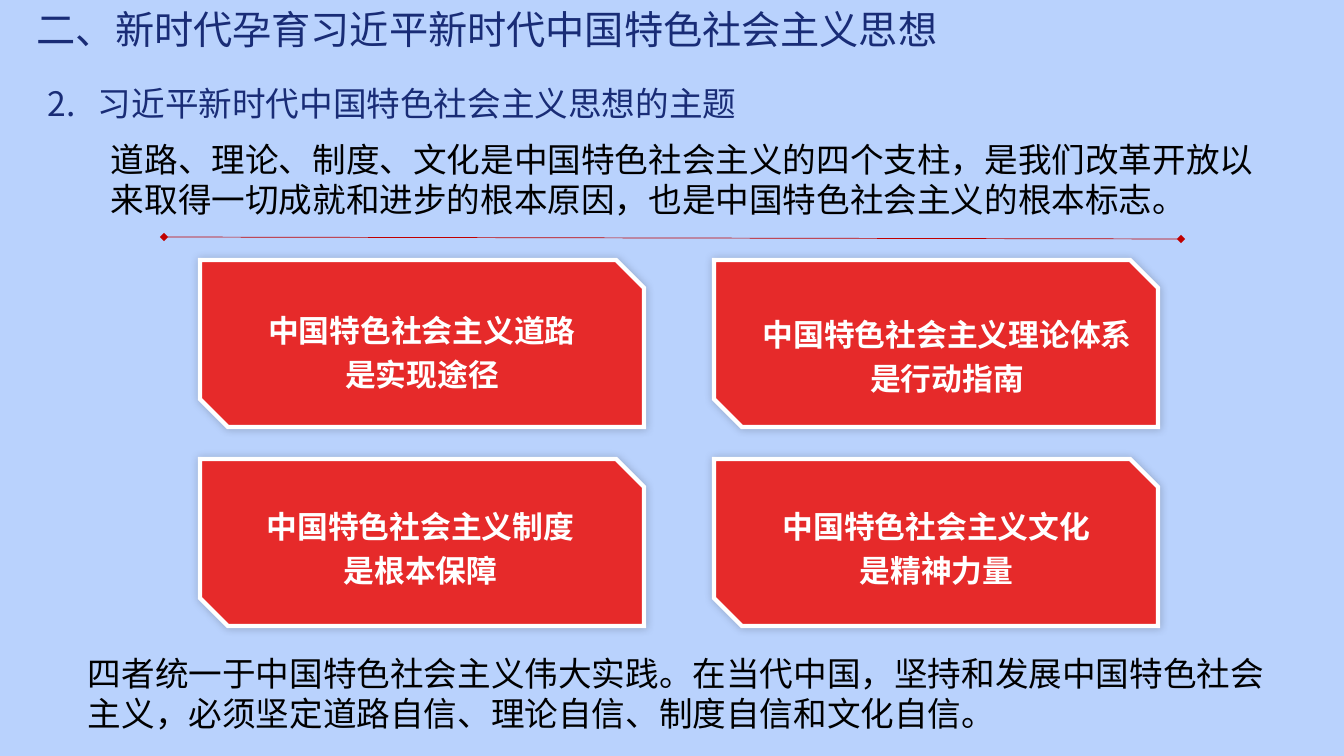
from dataclasses import dataclass
from lxml.etree import SubElement
from pptx import Presentation
from pptx.dml.color import RGBColor
from pptx.enum.shapes import MSO_CONNECTOR, MSO_SHAPE
from pptx.enum.text import MSO_AUTO_SIZE, PP_ALIGN
from pptx.oxml.ns import qn
from pptx.util import Pt

TITLE = "二、新时代孕育习近平新时代中国特色社会主义思想"
TOPIC = "2.\t习近平新时代中国特色社会主义思想的主题"
INTRO = "道路、理论、制度、文化是中国特色社会主义的四个支柱，是我们改革开放以来取得一切成就和进步的根本原因，也是中国特色社会主义的根本标志。"
CLOSE = "四者统一于中国特色社会主义伟大实践。在当代中国，坚持和发展中国特色社会主义，必须坚定道路自信、理论自信、制度自信和文化自信。"
CARDS = [
    ("中国特色社会主义道路\n是实现途径", (224, 299, 396, 100), True),
    ("中国特色社会主义理论体系\n是行动指南", (752, 303, 390, 100), False),
    ("中国特色社会主义制度\n是根本保障", (185, 495, 471, 100), True),
    ("中国特色社会主义文化\n是精神力量", (772, 495, 329, 100), False),
]


@dataclass
class Theme:
    font: str = "Noto Sans CJK SC"
    back: str = "B9D2FD"
    navy: str = "192C76"
    ink: str = "000000"
    card: str = "E62A2A"
    white: str = "FFFFFF"
    rule: str = "C00000"
    title: int = 28
    body: int = 24
    label: int = 22


theme = Theme()
WIDE, HIGH = 1344, 756
CARD_W, CARD_H = 444, 167
LEFT, TOP = 200, 260
STEP_X, STEP_Y = 514, 199
TAB = 50


def px(n):
    return round(n * 914400 / 100.8)


def rgb(code):
    return RGBColor.from_string(code)


def add_text(slide, text, box, size, color, bold=False, align=PP_ALIGN.LEFT,
             space=None, wrap=True, tab=None):
    frame = slide.shapes.add_textbox(*map(px, box)).text_frame
    frame.word_wrap = wrap
    frame.auto_size = MSO_AUTO_SIZE.SHAPE_TO_FIT_TEXT
    frame.text = text
    for para in frame.paragraphs:
        para.alignment = align
        if space:
            para.line_spacing = space
        if tab:
            stops = SubElement(para._p.get_or_add_pPr(), qn("a:tabLst"))
            SubElement(stops, qn("a:tab"), pos=str(px(tab)), algn="l")
        for run in para.runs:
            font = run.font
            font.name = theme.font
            font.size = Pt(size)
            font.bold = bold
            font.color.rgb = rgb(color)
            SubElement(run._r.get_or_add_rPr(), qn("a:ea"), typeface=theme.font)


def add_rule(slide):
    rule = slide.shapes.add_connector(
        MSO_CONNECTOR.STRAIGHT, *map(px, (164, 237, 1181, 239)))
    rule.line.color.rgb = rgb(theme.rule)
    rule.line.width = Pt(0.5)
    for end in ("a:headEnd", "a:tailEnd"):
        SubElement(rule.line._get_or_add_ln(), qn(end), type="diamond")
    SubElement(rule._element.spPr, qn("a:effectLst"))


def add_card(slide, index):
    row, col = divmod(index, 2)
    box = (LEFT + col * STEP_X, TOP + row * STEP_Y, CARD_W, CARD_H)
    card = slide.shapes.add_shape(MSO_SHAPE.SNIP_2_DIAG_RECTANGLE, *map(px, box))
    card.fill.solid()
    card.fill.fore_color.rgb = rgb(theme.card)
    card.line.color.rgb = rgb(theme.white)
    card.line.width = Pt(3)
    SubElement(card.line._get_or_add_ln(), qn("a:miter"), lim="800000")
    card.shadow.inherit = False
    effect = card._element.spPr.find(qn("a:effectLst"))
    shade = SubElement(effect, qn("a:outerShdw"), blurRad=str(Pt(6)),
                       dist="0", dir="13500000", rotWithShape="0")
    tint = SubElement(shade, qn("a:srgbClr"), val=theme.ink)
    SubElement(tint, qn("a:alpha"), val="20000")


def main():
    deck = Presentation()
    deck.slide_width, deck.slide_height = px(WIDE), px(HIGH)
    slide = deck.slides.add_slide(deck.slide_layouts[6])
    slide.background.fill.solid()
    slide.background.fill.fore_color.rgb = rgb(theme.back)
    add_rule(slide)
    for index in range(len(CARDS)):
        add_card(slide, index)
    for text, box, wrap in CARDS:
        add_text(slide, text, box, theme.label, theme.white, bold=True,
                 align=PP_ALIGN.CENTER, space=1.2, wrap=wrap)
    add_text(slide, INTRO, (101, 134, 1167, 92), theme.body, theme.ink)
    add_text(slide, CLOSE, (78, 648, 1227, 92), theme.body, theme.ink)
    add_text(slide, TOPIC, (38, 78, 1054, 50), theme.body, theme.navy, tab=TAB)
    add_text(slide, TITLE, (27, 0, 1050, 57), theme.title, theme.navy)
    deck.save("out.pptx")


if __name__ == "__main__":
    main()
